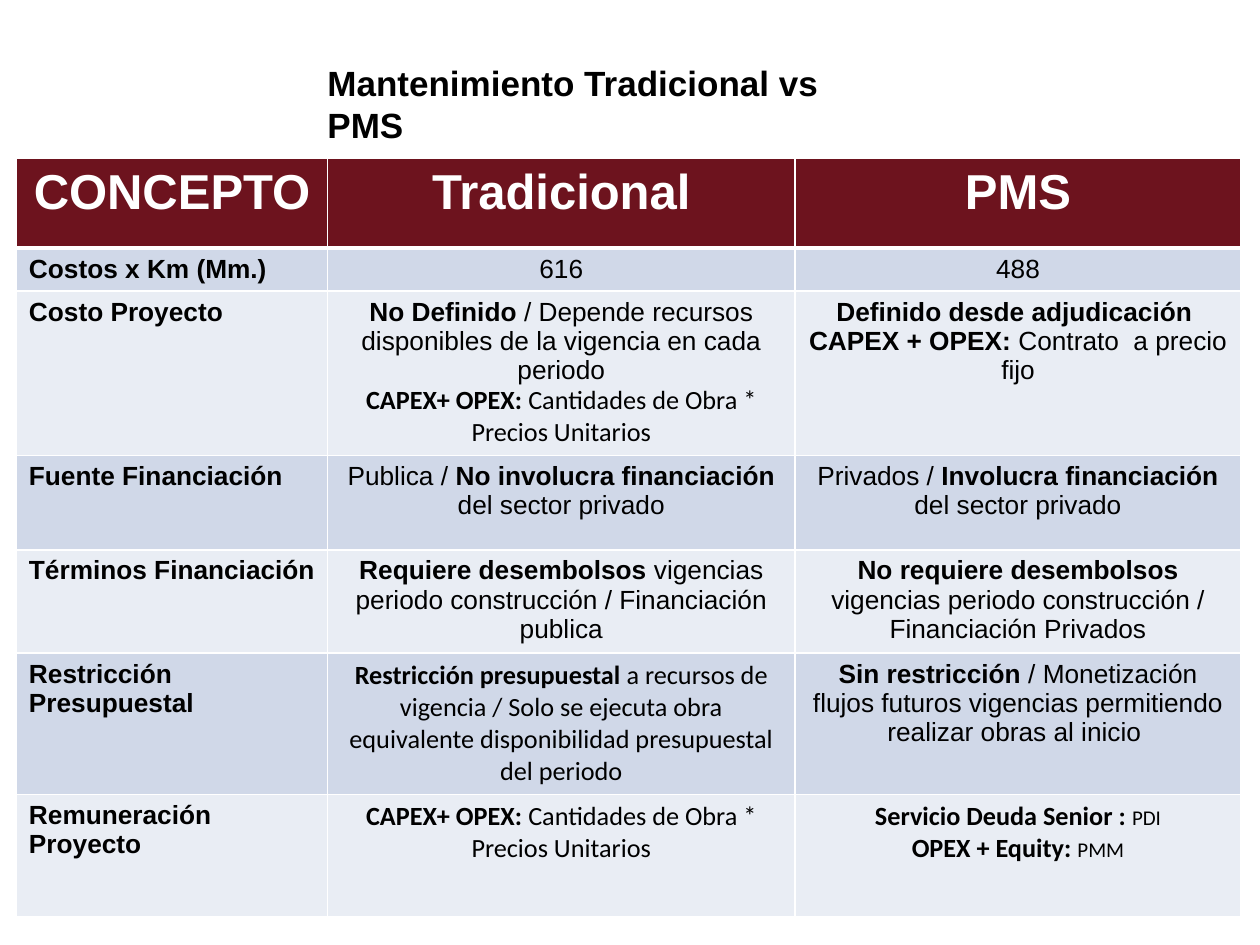
from dataclasses import dataclass
from itertools import product

from lxml import etree
from pptx import Presentation
from pptx import util as u
from pptx.dml.color import RGBColor
from pptx.enum import text
from pptx.oxml import ns

WINE = RGBColor(0x6D, 0x13, 0x1E)
BLUE = RGBColor(0xD0, 0xD8, 0xE8)
PALE = RGBColor(0xE9, 0xED, 0xF4)
WHITE = RGBColor(0xFF, 0xFF, 0xFF)
BLACK = RGBColor(0x00, 0x00, 0x00)
WIDTH, HEIGHT = u.Inches(10), u.Inches(7.5)
COLUMNS = (2.47, 3.71, 3.54)
ROWS = (0.71, 0.34, 1.3, 0.75, 0.82, 1.06, 0.97)


@dataclass
class Line:
    """A paragraph whose bold and plain runs alternate, bold first."""
    runs: tuple
    font: str = "Arial"
    plain_size: int = 15


WORK = Line(("CAPEX+ OPEX: ", "Cantidades de Obra * Precios Unitarios"), "Calibri")
HEADINGS = ("CONCEPTO", "Tradicional", "PMS")
BODY = (
    ("Costos x Km (Mm.)", [Line(("", "616"))], [Line(("", "488"))]),
    ("Costo Proyecto",
     [Line(("No Definido ", "/ Depende recursos disponibles de la vigencia en cada periodo")), WORK],
     [Line(("Definido desde adjudicación ",)),
      Line(("CAPEX + OPEX: ", "Contrato  a precio fijo"))]),
    ("Fuente Financiación",
     [Line(("", "Publica / ", "No involucra financiación", " del sector privado"))],
     [Line(("", "Privados / ", "Involucra financiación", " del sector privado"))]),
    ("Términos Financiación",
     [Line(("Requiere desembolsos ", "vigencias periodo construcción / Financiación publica"))],
     [Line(("No requiere desembolsos ", "vigencias periodo construcción / Financiación Privados"))]),
    ("Restricción Presupuestal",
     [Line(("Restricción presupuestal ",
            "a recursos de vigencia / Solo se ejecuta obra equivalente "
            "disponibilidad presupuestal del periodo"), "Calibri")],
     [Line(("Sin restricción ",
            "/ Monetización flujos futuros vigencias permitiendo realizar obras al inicio "))]),
    ("Remuneración Proyecto", [WORK],
     [Line(("Servicio Deuda Senior : ", "PDI"), "Calibri", 12),
      Line(("OPEX + Equity: ", "PMM"), "Calibri", 12)]),
)


def apply_format(target, values):
    """Set each attribute named in a dict of format values."""
    for name, value in values.items():
        setattr(target, name, value)


def add_run(paragraph, words, color, **values):
    """Append one formatted run."""
    run = paragraph.add_run()
    run.text = words
    apply_format(run.font, values)
    run.font.color.rgb = color


def write_lines(frame, lines, alignment, color, size):
    """Fill a text frame with paragraphs of alternating weight."""
    for index, line in enumerate(lines):
        paragraph = frame.add_paragraph() if index else frame.paragraphs[0]
        paragraph.alignment = alignment
        for position, words in enumerate(line.runs):
            bold = position % 2 == 0
            if words:
                add_run(paragraph, words, color, name=line.font, bold=bold,
                        size=u.Pt(size if bold else line.plain_size))


def set_borders(cell, bottom):
    """Draw white cell borders with the given bottom width in points."""
    properties = cell._tc.get_or_add_tcPr()
    widths = {"a:lnL": 1, "a:lnR": 1, "a:lnT": 1, "a:lnB": bottom}
    for index, (tag, width) in enumerate(widths.items()):
        border = etree.Element(ns.qn(tag), w=str(u.Pt(width)))
        fill = etree.SubElement(border, ns.qn("a:solidFill"))
        etree.SubElement(fill, ns.qn("a:srgbClr"), val=str(WHITE))
        properties.insert(index, border)


def add_title(slide, left, top, width, height):
    """Place the slide title in its box."""
    frame = slide.shapes.add_textbox(left, top, width, height).text_frame
    apply_format(frame, {"word_wrap": True, "vertical_anchor": text.MSO_ANCHOR.MIDDLE})
    write_lines(frame, [Line(("Mantenimiento Tradicional vs PMS",))],
                text.PP_ALIGN.LEFT, BLACK, 20)


def add_comparison(slide, left, top, width, height):
    """Place the comparison table, sharing its box by column and row weights."""
    shape = slide.shapes.add_table(len(ROWS), len(COLUMNS), left, top, width, height)
    table = shape.table
    for column, weight in zip(table.columns, COLUMNS):
        column.width = int(width * weight / sum(COLUMNS))
    for row, weight in zip(table.rows, ROWS):
        row.height = int(height * weight / sum(ROWS))
    contents = (HEADINGS,) + BODY
    for row, column in product(range(len(ROWS)), range(len(COLUMNS))):
        cell, content = table.cell(row, column), contents[row][column]
        lines = [Line((content,))] if isinstance(content, str) else content
        header = row == 0
        alignment = text.PP_ALIGN.CENTER if header or column else text.PP_ALIGN.LEFT
        cell.fill.solid()
        cell.fill.fore_color.rgb = WINE if header else (PALE, BLUE)[row % 2]
        set_borders(cell, 3 if header else 1)
        write_lines(cell.text_frame, lines, alignment,
                    WHITE if header else BLACK, 28 if header else 15)


def main():
    """Build and save the slide."""
    presentation = Presentation()
    apply_format(presentation, {"slide_width": WIDTH, "slide_height": HEIGHT})
    slide = presentation.slides.add_slide(presentation.slide_layouts[6])
    add_comparison(slide, int(WIDTH * 0.013), int(HEIGHT * 0.168),
                   u.Inches(sum(COLUMNS)), u.Inches(sum(ROWS)))
    add_title(slide, WIDTH // 4, u.Inches(0.2), int(WIDTH * 0.451), HEIGHT // 6)
    presentation.save("out.pptx")


if __name__ == "__main__":
    main()
